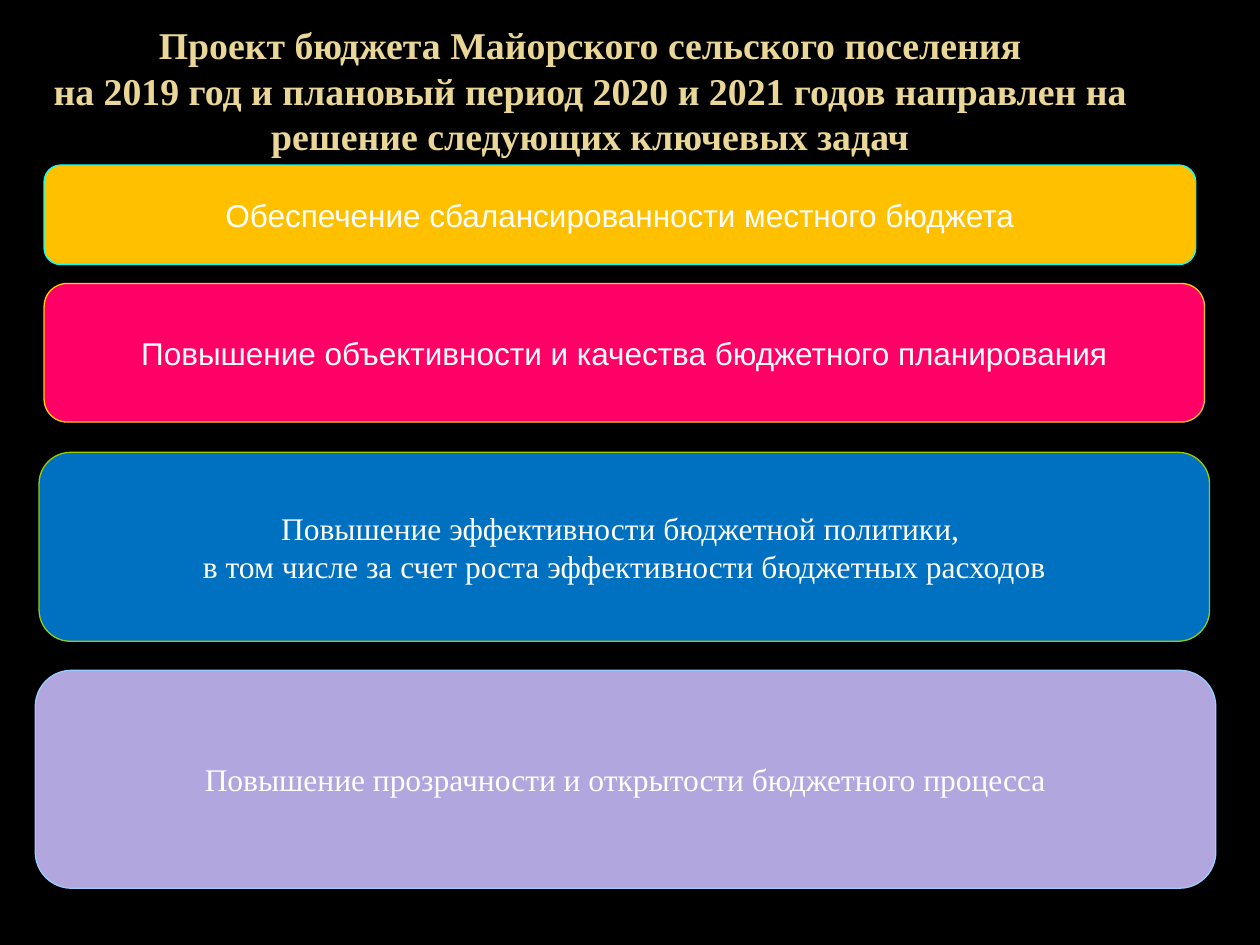
from pptx import Presentation
from pptx.dml.color import RGBColor
from pptx.enum.shapes import MSO_SHAPE
from pptx.enum.text import MSO_ANCHOR, PP_ALIGN
from pptx.util import Inches, Pt

ROUNDED = MSO_SHAPE.ROUNDED_RECTANGLE
MIDDLE = MSO_ANCHOR.MIDDLE
CENTER = PP_ALIGN.CENTER

BLACK = RGBColor(0x00, 0x00, 0x00)
WHITE = RGBColor(0xFF, 0xFF, 0xFF)
SAND = RGBColor(0xEA, 0xD6, 0x96)
AMBER = RGBColor(0xFF, 0xC0, 0x00)
CYAN = RGBColor(0x00, 0xFF, 0xFF)
PINK = RGBColor(0xFF, 0x00, 0x66)
GOLD = RGBColor(0xFF, 0xCC, 0x00)
BLUE = RGBColor(0x00, 0x70, 0xC0)
LIME = RGBColor(0x99, 0xCC, 0x00)
LILAC = RGBColor(0xB2, 0xA6, 0xDF)
SKY = RGBColor(0x99, 0xCC, 0xFF)

SANS = "Arial"
SERIF = "Times New Roman"

# "\v" is a line break inside a paragraph, "\n" starts a new paragraph
HEADING = (
    "Проект бюджета Майорского сельского поселения\v"
    "на 2019 год и плановый период 2020 и 2021 годов "
    "направлен на решение следующих ключевых задач"
)

# Left, top, width, height in inches; fill, outline, font, wording
TASKS = [
    ((0.35, 1.31, 9.14, 0.79), AMBER, CYAN, SANS,
     "Обеспечение сбалансированности местного бюджета"),
    ((0.35, 2.25, 9.21, 1.1), PINK, GOLD, SANS,
     "Повышение объективности и качества бюджетного планирования"),
    ((0.31, 3.59, 9.29, 1.5), BLUE, LIME, SERIF,
     "Повышение эффективности бюджетной политики, \n"
     "в том числе за счет роста эффективности бюджетных расходов"),
    ((0.28, 5.32, 9.37, 1.73), LILAC, SKY, SERIF,
     "Повышение прозрачности и открытости бюджетного процесса"),
]


def write_text(frame, wording, font, size, color, bold=False, wrap=False):
    frame.text = wording
    frame.word_wrap = wrap
    frame.vertical_anchor = MIDDLE
    for paragraph in frame.paragraphs:
        paragraph.alignment = CENTER
        paragraph.font.name = font
        paragraph.font.size = Pt(size)
        paragraph.font.bold = bold
        paragraph.font.color.rgb = color


def add_heading(slide):
    heading = slide.shapes.add_textbox(
        0, Inches(0.28), Inches(9.37), Inches(0.87))
    write_text(heading.text_frame, HEADING, SERIF, 21.6, SAND,
               bold=True, wrap=True)


def add_task(slide, box, fill, outline, font, wording):
    task = slide.shapes.add_shape(ROUNDED, *map(Inches, box))
    task.shadow.inherit = False
    task.fill.solid()
    task.fill.fore_color.rgb = fill
    task.line.color.rgb = outline
    task.line.width = Pt(0.75)
    write_text(task.text_frame, wording, font, 18, WHITE)


def main():
    deck = Presentation()
    deck.slide_width = Inches(10)
    deck.slide_height = Inches(7.5)
    slide = deck.slides.add_slide(deck.slide_layouts[6])

    # Background
    slide.background.fill.solid()
    slide.background.fill.fore_color.rgb = BLACK

    # Heading and the key tasks below it
    add_heading(slide)
    for task in TASKS:
        add_task(slide, *task)

    deck.save("out.pptx")


if __name__ == "__main__":
    main()
